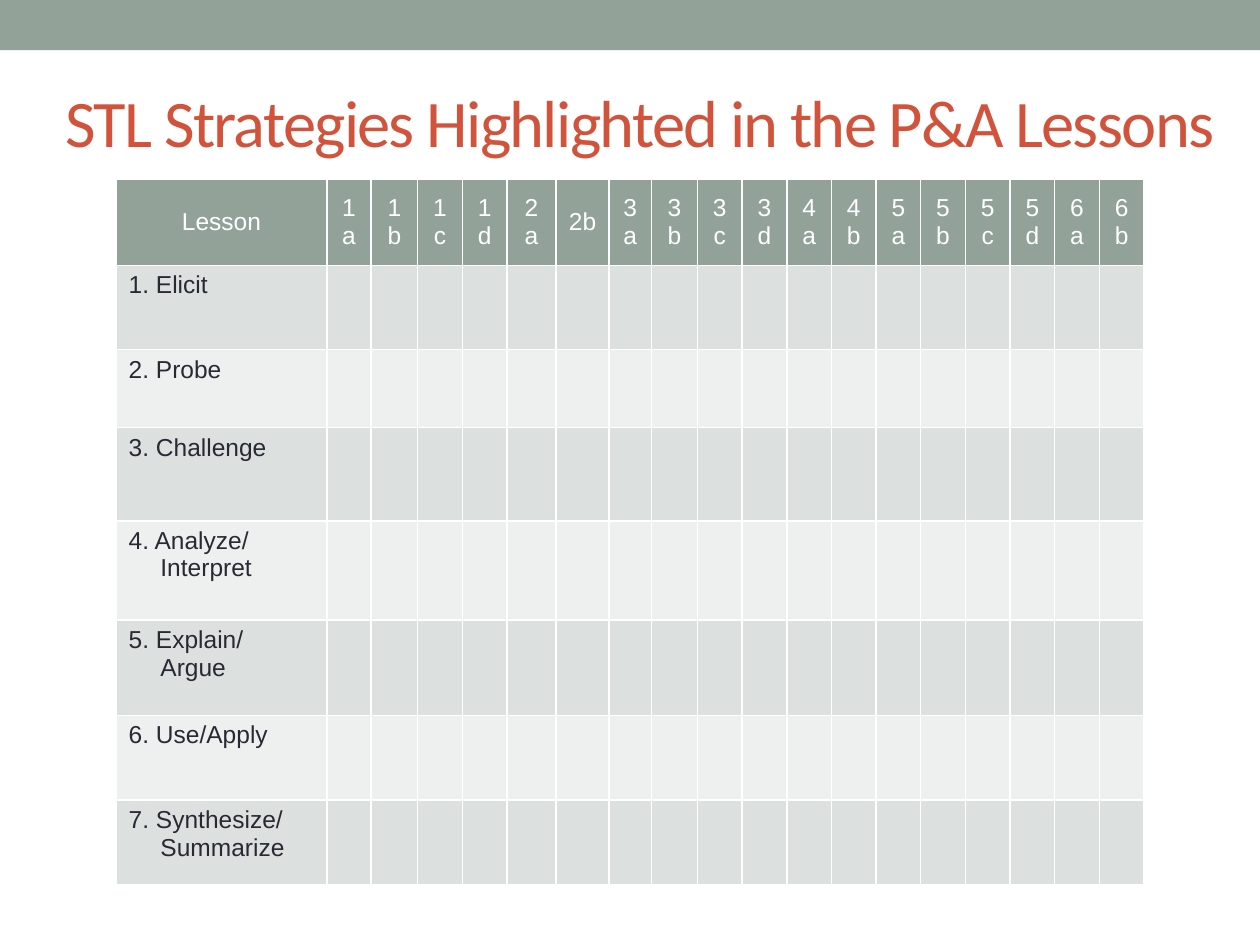
from lxml import etree
from pptx import Presentation
from pptx import util as u
from pptx.dml.color import RGBColor
from pptx.enum import shapes, text
from pptx.oxml.ns import qn

COLORS = {
    "sage": "93A299",
    "title": "D2533C",
    "ink": "292934",
    "white": "FFFFFF",
    "dark_band": "DCE0DE",
    "light_band": "EEF0EF",
}
LESSON_PARTS = {1: "abcd", 2: "ab", 3: "abcd", 4: "ab", 5: "abcd", 6: "ab"}
LESSONS = [f"{number}{part}" for number, parts in LESSON_PARTS.items() for part in parts]
STRATEGIES = [
    "1. Elicit",
    "2. Probe",
    "3. Challenge",
    "4. Analyze/ Interpret",
    "5. Explain/ Argue",
    "6. Use/Apply",
    "7. Synthesize/\vSummarize",
]
COLUMN_WIDTHS = [4.25, 0.89, 0.94, 0.9, 0.9, 0.99, 1.07, 0.85, 0.93] + [0.9] * 10
ROW_HEIGHTS = [1.74, 1.7, 1.57, 1.88, 2, 1.92, 1.71, 1.71]


def rgb(name):
    return RGBColor.from_string(COLORS[name])


def apply_format(target, values):
    for name, value in values.items():
        setattr(target, name, value)


def fill_with(target, color):
    target.fill.solid()
    target.fill.fore_color.rgb = rgb(color)


def write_text(paragraph, content, font_name, size, color):
    paragraph.text = content
    for run in paragraph.runs:
        apply_format(run.font, {"name": font_name, "size": u.Pt(size)})
        run.font.color.rgb = rgb(color)


def add_band(slide, left, top, width, height):
    shape = slide.shapes.add_shape(
        shapes.MSO_SHAPE.RECTANGLE, u.Cm(left), u.Cm(top), u.Cm(width), u.Cm(height))
    shape.shadow.inherit = False
    fill_with(shape, "sage")
    shape.line.fill.background()


def add_title(slide, left, top, width, height):
    shape = slide.shapes.add_textbox(u.Cm(left), u.Cm(top), u.Cm(width), u.Cm(height))
    frame = shape.text_frame
    apply_format(frame, {
        "word_wrap": True,
        "vertical_anchor": text.MSO_ANCHOR.MIDDLE,
        "margin_right": 0,
    })
    paragraph = frame.paragraphs[0]
    write_text(paragraph, "STL Strategies Highlighted in the P&A Lessons", "Calibri", 38, "title")
    paragraph.runs[0].font._element.set("spc", "-100")


def add_borders(cell):
    properties = cell._tc.get_or_add_tcPr()
    for index, side in enumerate(("a:lnL", "a:lnR", "a:lnT", "a:lnB")):
        line = etree.Element(qn(side), w=str(u.Pt(1)))
        fill = etree.SubElement(line, qn("a:solidFill"))
        etree.SubElement(fill, qn("a:srgbClr"), val=COLORS["white"])
        properties.insert(index, line)


def format_header(cell, content):
    cell.vertical_anchor = text.MSO_ANCHOR.MIDDLE
    paragraph = cell.text_frame.paragraphs[0]
    paragraph.alignment = text.PP_ALIGN.CENTER
    write_text(paragraph, content, "Arial", 14, "white")


def format_strategy(cell, content):
    paragraph = cell.text_frame.paragraphs[0]
    write_text(paragraph, content, "Arial", 14, "ink")
    paragraph.space_after = u.Pt(12)
    properties = paragraph._p.get_or_add_pPr()
    properties.set("marL", str(u.Cm(0.64)))
    properties.set("indent", str(u.Cm(-0.64)))


def add_strategy_table(slide, left, top, width, height):
    table = slide.shapes.add_table(
        len(ROW_HEIGHTS), len(COLUMN_WIDTHS),
        u.Cm(left), u.Cm(top), u.Cm(width), u.Cm(height)).table
    for column, column_width in zip(table.columns, COLUMN_WIDTHS):
        column.width = u.Cm(column_width)
    for index, (row, row_height) in enumerate(zip(table.rows, ROW_HEIGHTS)):
        row.height = u.Cm(row_height)
        band = "sage" if index == 0 else ("light_band", "dark_band")[index % 2]
        for cell in row.cells:
            fill_with(cell, band)
            add_borders(cell)
    for cell, content in zip(table.rows[0].cells, ["Lesson"] + LESSONS):
        format_header(cell, content)
    for index, strategy in enumerate(STRATEGIES, 1):
        format_strategy(table.cell(index, 0), strategy)


def main():
    presentation = Presentation()
    apply_format(presentation, {"slide_width": u.Cm(25.4), "slide_height": u.Cm(19.05)})
    slide = presentation.slides.add_slide(presentation.slide_layouts[6])
    add_band(slide, 0, 0, 25.4, 1.01)
    add_title(slide, 1.07, 1.07, 23.9, 2.74)
    add_strategy_table(slide, 2.34, 3.61, sum(COLUMN_WIDTHS), sum(ROW_HEIGHTS))
    presentation.save("out.pptx")


if __name__ == "__main__":
    main()
